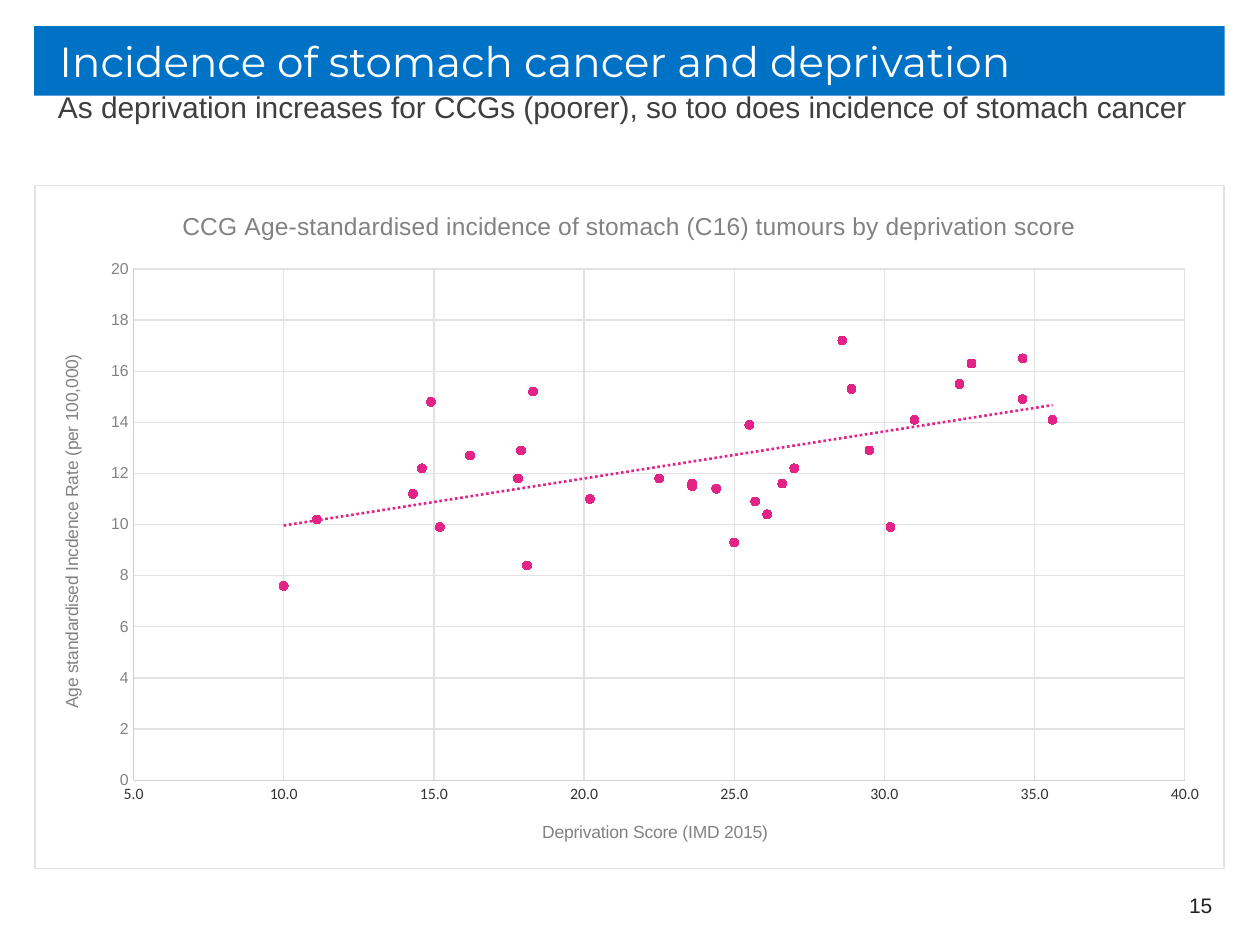
from dataclasses import dataclass

from lxml import etree
from pptx import Presentation
from pptx import util as u
from pptx.chart.data import XyChartData
from pptx.dml.color import RGBColor
from pptx.enum import chart as ch
from pptx.enum import text

BLUE = RGBColor(0x00, 0x72, 0xC6)
WHITE = RGBColor(0xFF, 0xFF, 0xFF)
DARK = RGBColor(0x3F, 0x3F, 0x3F)
BLACK = RGBColor(0x20, 0x20, 0x20)
INK = RGBColor(0x33, 0x33, 0x33)
GREY = RGBColor(0x82, 0x82, 0x82)
EDGE = RGBColor(0xCF, 0xCF, 0xCF)
GRID = RGBColor(0xE2, 0xE2, 0xE2)
PINK = RGBColor(0xE3, 0x24, 0x86)

NS = ('xmlns:c="http://schemas.openxmlformats.org/drawingml/2006/chart" '
      'xmlns:a="http://schemas.openxmlformats.org/drawingml/2006/main"')
LEFT, WIDE = 0.69, 24.0

POINTS = (
    (34.6, 14.9), (17.8, 11.8), (16.2, 12.7), (26.6, 11.6),
    (15.2, 9.9), (25.0, 9.3), (25.7, 10.9), (34.6, 16.5),
    (23.6, 11.5), (23.6, 11.6), (27.0, 12.2), (25.5, 13.9),
    (24.4, 11.4), (31.0, 14.1), (14.3, 11.2), (17.9, 12.9),
    (18.1, 8.4), (22.5, 11.8), (32.5, 15.5), (11.1, 10.2),
    (28.9, 15.3), (28.6, 17.2), (14.9, 14.8), (32.9, 16.3),
    (20.2, 11.0), (10.0, 7.6), (29.5, 12.9), (14.6, 12.2),
    (35.6, 14.1), (30.2, 9.9), (18.3, 15.2), (26.1, 10.4),
)


@dataclass
class Label:
    words: str
    left: float
    top: float
    width: float
    height: float
    size: float
    face: str
    color: RGBColor
    inset: float
    edge: float = 0
    fill: RGBColor | None = None
    align: text.PP_ALIGN = text.PP_ALIGN.LEFT
    anchor: text.MSO_ANCHOR = text.MSO_ANCHOR.MIDDLE
    space: float = 1.0


@dataclass
class Scale:
    title: str
    low: float
    high: float
    step: float
    form: str
    face: str
    color: RGBColor


LABELS = (
    Label("Incidence of stomach cancer and deprivation",
          LEFT, 0.53, WIDE, 1.4, 24, "Montserrat", WHITE, 0.51, fill=BLUE),
    Label("As deprivation increases for CCGs (poorer), so too does incidence of stomach cancer",
          LEFT, 1.93, WIDE, 1.19, 17.1, "Arial", DARK, 0.48,
          anchor=text.MSO_ANCHOR.TOP, space=0.8),
    Label("15", 18.77, 17.73, 5.92, 1.02, 12, "Arial", BLACK, 0.25, 0.25,
          align=text.PP_ALIGN.RIGHT),
)
ACROSS = Scale("Deprivation Score (IMD 2015)", 5, 40, 5, "0.0", "Calibri", INK)
UP = Scale("Age standardised Incdence Rate (per 100,000)", 0, 20, 2, "0", "Arial", GREY)


def style(font, size: float, face: str, color: RGBColor) -> None:
    font.size, font.name, font.bold = u.Pt(size), face, False
    font.color.rgb = color


def write(para, words: str, size: float, face: str, color: RGBColor) -> None:
    run = para.add_run()
    run.text = words
    style(run.font, size, face, color)


def draw_label(slide, item: Label) -> None:
    box = slide.shapes.add_textbox(u.Cm(item.left), u.Cm(item.top),
                                   u.Cm(item.width), u.Cm(item.height))
    if item.fill is not None:
        box.fill.solid()
        box.fill.fore_color.rgb = item.fill
    frame = box.text_frame
    frame.word_wrap = True
    frame.vertical_anchor = item.anchor
    frame.margin_left, frame.margin_right = u.Cm(item.inset), u.Cm(item.edge)
    frame.margin_top = frame.margin_bottom = 0
    para = frame.paragraphs[0]
    para.alignment, para.line_spacing = item.align, item.space
    write(para, item.words, item.size, item.face, item.color)


def set_line(line, color: RGBColor) -> None:
    line.color.rgb = color
    line.width = u.Pt(0.75)


def set_axis(axis, scale: Scale) -> None:
    axis.minimum_scale, axis.maximum_scale = scale.low, scale.high
    axis.major_unit = scale.step
    axis.major_tick_mark = axis.minor_tick_mark = ch.XL_TICK_MARK.NONE
    axis.has_major_gridlines = True
    set_line(axis.major_gridlines.format.line, GRID)
    set_line(axis.format.line, EDGE)
    axis.tick_labels.number_format = scale.form
    axis.tick_labels.number_format_is_linked = False
    style(axis.tick_labels.font, 9, scale.face, scale.color)
    write(axis.axis_title.text_frame.paragraphs[0], scale.title, 10, "Arial", GREY)


def make(xml: str):
    return etree.fromstring(xml)


def outline(color: RGBColor, width: float, dash: str) -> str:
    return (f'<a:ln w="{u.Pt(width)}"><a:solidFill><a:srgbClr val="{color}"/></a:solidFill>'
            f'<a:prstDash val="{dash}"/></a:ln>')


def draw_chart(slide) -> None:
    data = XyChartData()
    group = data.add_series("Series 1")
    for x, y in POINTS:
        group.add_data_point(x, y)
    chart = slide.shapes.add_chart(ch.XL_CHART_TYPE.XY_SCATTER, u.Cm(LEFT), u.Cm(3.73),
                                   u.Cm(WIDE), u.Cm(13.79), data).chart
    style(chart.font, 10, "Arial", DARK)
    chart.has_legend = False
    chart.has_title = True
    write(chart.chart_title.text_frame.paragraphs[0],
          "CCG Age-standardised incidence of stomach (C16) tumours by deprivation score",
          14, "Arial", GREY)
    chart.chart_title.include_in_layout = False
    set_axis(chart.category_axis, ACROSS)
    set_axis(chart.value_axis, UP)

    plot = chart.plots[0]
    plot.vary_by_categories = False
    dots = plot.series[0]
    dots.format.line.fill.background()
    dots.marker.style, dots.marker.size = ch.XL_MARKER_STYLE.CIRCLE, 5
    dots.marker.format.fill.solid()
    dots.marker.format.fill.fore_color.rgb = PINK
    set_line(dots.marker.format.line, PINK)
    root = chart.element
    root.find(".//{*}xVal").addprevious(make(
        f'<c:trendline {NS}><c:spPr>{outline(PINK, 1.5, "sysDot")}</c:spPr>'
        '<c:trendlineType val="linear"/><c:dispRSqr val="0"/><c:dispEq val="0"/></c:trendline>'))
    root.find("{*}chart").addnext(make(
        f'<c:spPr {NS}><a:solidFill><a:srgbClr val="{WHITE}"/></a:solidFill>'
        f'{outline(GRID, 0.75, "solid")}</c:spPr>'))
    area = root.find(".//{*}plotArea")
    for old in area.findall("{*}layout"):
        area.remove(old)
    spots = "".join(f'<c:{key} val="{val}"/>' for key, val in (
        ("layoutTarget", "inner"), ("xMode", "edge"), ("yMode", "edge"),
        ("x", 0.083), ("y", 0.122), ("w", 0.884), ("h", 0.749)))
    area.insert(0, make(f'<c:layout {NS}><c:manualLayout>{spots}</c:manualLayout></c:layout>'))


def main() -> None:
    """Build the slide on stomach cancer and deprivation."""
    deck = Presentation()
    deck.slide_width, deck.slide_height = u.Cm(25.4), u.Cm(19.05)
    slide = deck.slides.add_slide(deck.slide_layouts[6])
    for item in LABELS:
        draw_label(slide, item)
    draw_chart(slide)
    deck.save("out.pptx")


if __name__ == "__main__":
    main()
